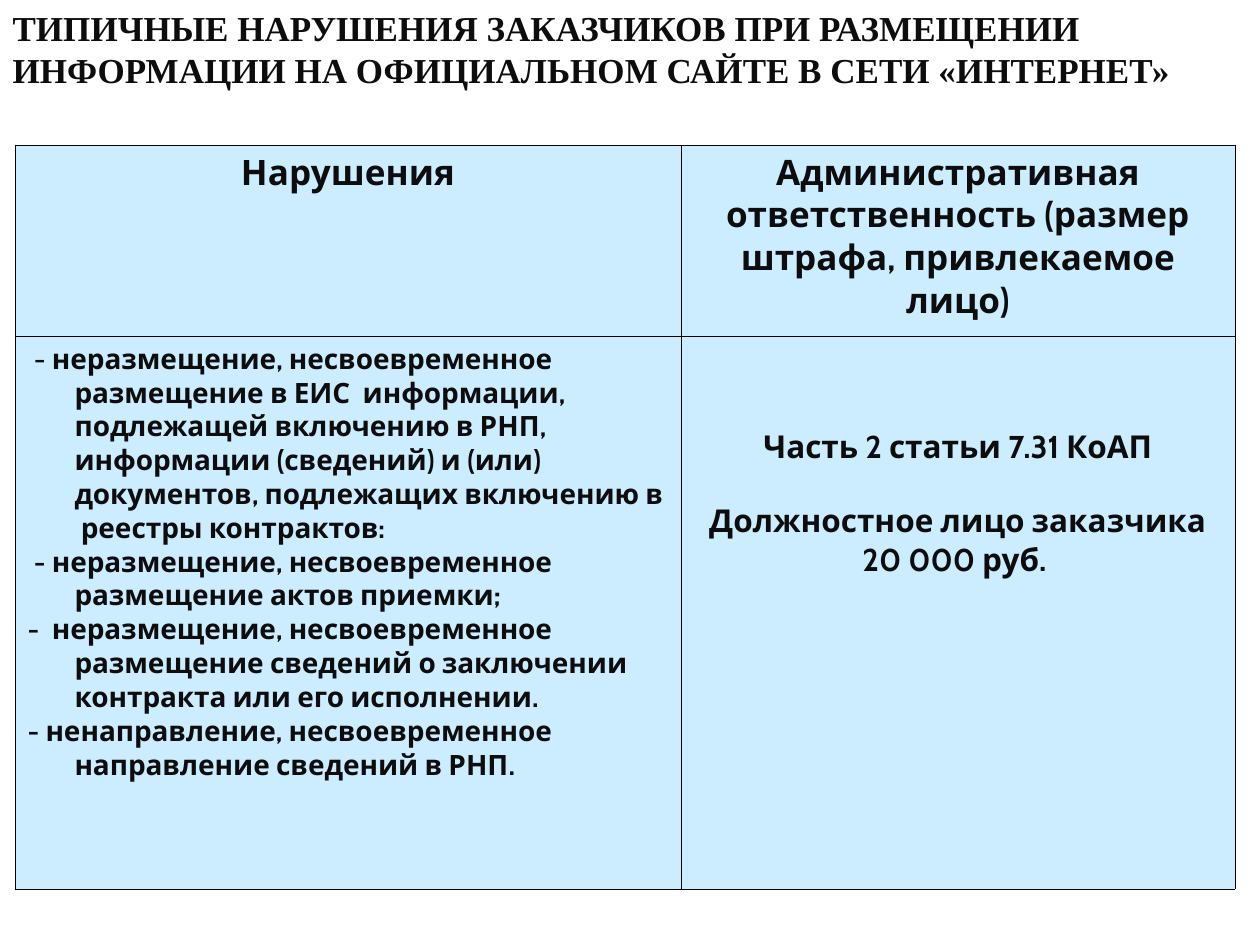
from dataclasses import dataclass

from lxml import etree
from pptx import Presentation
from pptx import util as u
from pptx.dml.color import RGBColor
from pptx.enum import text
from pptx.oxml import ns

LEFT, MID = text.PP_ALIGN.LEFT, text.PP_ALIGN.CENTER


@dataclass(frozen=True)
class Theme:
    ink: str = "0D0D0D"
    cell: str = "CCECFF"
    edge: str = "000000"
    edge_w: float = 0.45
    serif: str = "Times New Roman"
    sans: str = "Cabin"
    big: int = 20
    mid: int = 18
    small: int = 16


T = Theme()

TITLE = ("ТИПИЧНЫЕ НАРУШЕНИЯ ЗАКАЗЧИКОВ ПРИ РАЗМЕЩЕНИИ "
         "ИНФОРМАЦИИ НА ОФИЦИАЛЬНОМ САЙТЕ В СЕТИ «ИНТЕРНЕТ»")
HEADS = ["Нарушения",
         "Административная ответственность (размер штрафа, привлекаемое лицо)"]
# Each fault is a plain lead and a bold body
FAULTS = [
    (" - ", "неразмещение, несвоевременное размещение в ЕИС  информации, "
            "подлежащей включению в РНП, информации (сведений) и (или) "
            "документов, подлежащих включению в  реестры контрактов:"),
    ("", " - неразмещение, несвоевременное размещение актов приемки;"),
    ("", "-  неразмещение, несвоевременное размещение сведений о заключении "
         "контракта или его исполнении."),
    ("", "- ненаправление, несвоевременное направление сведений в РНП."),
]
# Each line of the penalty with the space before it
FINES = [("Часть 2 статьи 7.31 КоАП", 0),
         ("Должностное лицо заказчика", 36),
         ("20 000 руб. ", 0)]


def px(n):
    return u.Emu(round(n * 914400 / 126))


def assign(obj, **vals):
    for key, val in vals.items():
        setattr(obj, key, val)


def add_run(para, words, size, face=T.sans, bold=True):
    run = para.add_run()
    run.text = words
    assign(run.font, size=u.Pt(size), name=face, bold=bold)
    run.font.color.rgb = RGBColor.from_string(T.ink)


def next_para(frame, first, **vals):
    para = frame.paragraphs[0] if first else frame.add_paragraph()
    assign(para, **vals)
    return para


def style_cell(cell):
    cell.fill.solid()
    cell.fill.fore_color.rgb = RGBColor.from_string(T.cell)
    props = cell._tc.get_or_add_tcPr()
    # Borders come before the fill
    for i, side in enumerate(("lnL", "lnR", "lnT", "lnB")):
        line = etree.Element(ns.qn("a:" + side), w=str(u.Pt(T.edge_w)))
        fill = etree.SubElement(line, ns.qn("a:solidFill"))
        etree.SubElement(fill, ns.qn("a:srgbClr"), val=T.edge)
        props.insert(i, line)


def add_title(slide, x, y, w, h):
    shape = slide.shapes.title
    assign(shape, left=px(x), top=px(y), width=px(w), height=px(h))
    frame = shape.text_frame
    assign(frame, word_wrap=True, auto_size=text.MSO_AUTO_SIZE.NONE,
           vertical_anchor=text.MSO_ANCHOR.TOP)
    add_run(next_para(frame, True, alignment=LEFT), TITLE, T.big, T.serif)


def fill_faults(cell):
    for i, (lead, body) in enumerate(FAULTS):
        para = next_para(cell.text_frame, i == 0, alignment=LEFT)
        props = para._p.get_or_add_pPr()
        props.set("marL", str(px(47)))
        props.set("indent", str(-px(47)))
        if lead:
            add_run(para, lead, T.small, bold=False)
        add_run(para, body, T.small)


def fill_fines(cell):
    cell.margin_top = px(92)
    for i, (words, gap) in enumerate(FINES):
        para = next_para(cell.text_frame, i == 0, alignment=MID,
                         space_before=px(gap))
        add_run(para, words, T.mid)


def add_grid(slide, x, y, w, h):
    left, head = 666, 191
    frame = slide.shapes.add_table(2, 2, px(x), px(y), px(w), px(h))
    grid = frame.table
    assign(grid, first_row=False, horz_banding=False)
    for col, size in zip(grid.columns, (left, w - left)):
        col.width = px(size)
    for row, size in zip(grid.rows, (head, h - head)):
        row.height = px(size)
    for cell in grid.iter_cells():
        style_cell(cell)
    # Heading row
    for i, words in enumerate(HEADS):
        para = next_para(grid.cell(0, i).text_frame, True, alignment=MID)
        add_run(para, words, T.big)
    # Faults and their penalty
    fill_faults(grid.cell(1, 0))
    fill_fines(grid.cell(1, 1))


def main():
    deck = Presentation()
    assign(deck, slide_width=px(1260), slide_height=px(945))
    slide = deck.slides.add_slide(deck.slide_layouts[5])
    add_title(slide, 0, 0, 1260, 97)
    add_grid(slide, 15, 145, 1220, 744)
    deck.save("out.pptx")


if __name__ == "__main__":
    main()
